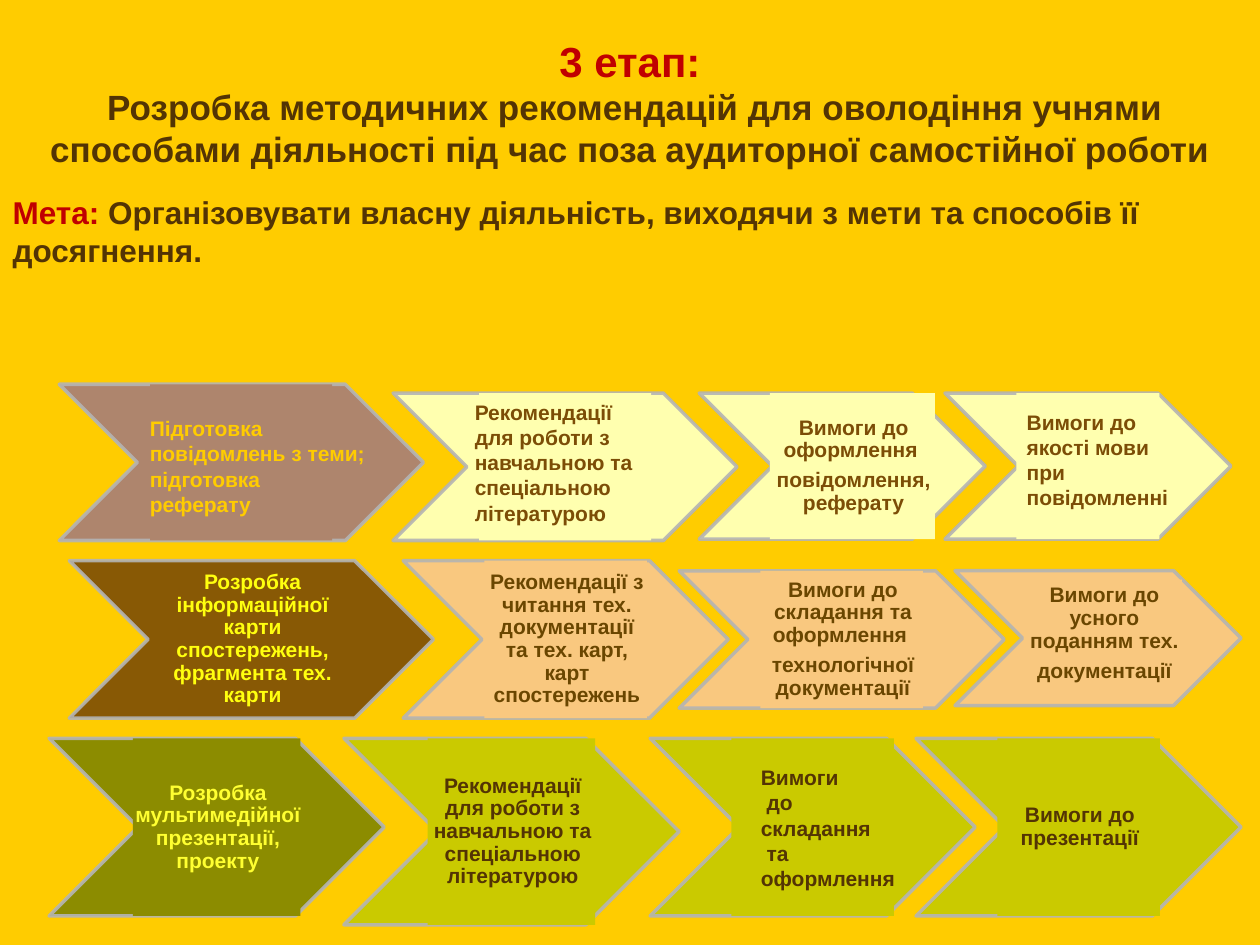
import pptx
import pptx.util
import pptx.dml.color
import pptx.enum.shapes
import pptx.enum.text
import pptx.oxml
import pptx.oxml.ns
from lxml import etree

Inches = pptx.util.Inches
Pt = pptx.util.Pt
RGBColor = pptx.dml.color.RGBColor
Shapes = pptx.enum.shapes.MSO_SHAPE
Anchor = pptx.enum.text.MSO_ANCHOR
Align = pptx.enum.text.PP_ALIGN
AutoSize = pptx.enum.text.MSO_AUTO_SIZE

GOLD = RGBColor(0xFF, 0xCC, 0x00)
RED = RGBColor(0xC0, 0x00, 0x00)
DARK_BROWN = RGBColor(0x53, 0x34, 0x04)
BROWN = RGBColor(0x7C, 0x4D, 0x06)
MID_BROWN = RGBColor(0x6A, 0x46, 0x00)
ROSE = RGBColor(0xAE, 0x85, 0x6D)
CREAM = RGBColor(0xFF, 0xFF, 0xAF)
PEACH = RGBColor(0xF9, 0xC8, 0x7F)
LIME = RGBColor(0xCA, 0xCA, 0x00)
OLIVE = RGBColor(0x8C, 0x8C, 0x00)
YELLOW = RGBColor(0xFF, 0xFF, 0x0F)
LIGHT_YELLOW = RGBColor(0xFF, 0xFF, 0x31)
GRAY = RGBColor(0xB4, 0xB4, 0xB4)

LITERATURE = "Рекомендації для роботи з навчальною та спеціальною літературою"

# Each step: chevron box, fill, label paragraphs, label colour, label box when not the middle half
STEPS = [
    ((7.5, 3.12, 2.27, 1.16), CREAM, [], BROWN, None),
    ((5.55, 3.12, 2.27, 1.16), CREAM, ["Вимоги до оформлення ", "повідомлення, реферату"],
     BROWN, (6.11, 3.12, 1.31, 1.16)),
    ((3.12, 3.12, 2.73, 1.17), CREAM, [], BROWN, None),
    ((0.47, 3.05, 2.89, 1.24), ROSE, [], GOLD, None),
    ((7.58, 4.53, 2.27, 1.07), PEACH, ["Вимоги до усного поданням тех.", "документації"],
     MID_BROWN, (8.13, 4.6, 1.25, 0.86)),
    ((5.39, 4.53, 2.58, 1.09), PEACH,
     ["Вимоги до складання та оформлення ", "технологічної документації"], MID_BROWN, None),
    ((3.2, 4.45, 2.58, 1.25), PEACH,
     ["Рекомендації з читання тех. документації та тех. карт, карт спостережень"],
     MID_BROWN, None),
    ((0.55, 4.45, 2.89, 1.25), BROWN,
     ["Розробка інформаційної карти спостережень, фрагмента тех. карти"],
     YELLOW, (1.27, 4.53, 1.45, 1.09)),
    ((7.27, 5.86, 2.58, 1.41), LIME, ["Вимоги до презентації"], DARK_BROWN, None),
    ((5.16, 5.86, 2.58, 1.41), LIME, [], DARK_BROWN, None),
    ((2.73, 5.86, 2.66, 1.48), LIME, [LITERATURE], DARK_BROWN, None),
    ((0.39, 5.86, 2.66, 1.41), OLIVE, ["Розробка мультимедійної презентації, проекту"],
     LIGHT_YELLOW, None),
]

NOTES = [
    ((8.05, 3.2, 1.33, 0.91), ["Вимоги до якості мови при повідомленні"], BROWN),
    ((3.67, 3.12, 1.64, 1.11), [LITERATURE], BROWN),
    ((1.09, 3.25, 1.95, 0.91), ["Підготовка повідомлень з теми;", "підготовка", "реферату"], GOLD),
    ((5.94, 6.02, 1.33, 1.11), ["Вимоги", " до складання", " та оформлення"], DARK_BROWN),
]


def inches(box):
    return [Inches(length) for length in box]


def place(shape, box):
    shape.left, shape.top, shape.width, shape.height = inches(box)


def set_font(font, size, color=None):
    font.name = "Arial"
    font.size = Pt(size)
    font.bold = True
    if color is not None:
        font.color.rgb = color


def write_paragraphs(frame, texts, color):
    frame.word_wrap = True
    frame.text = "\n".join(texts)
    for paragraph in frame.paragraphs:
        set_font(paragraph.font, 12, color)


def set_opacity(fill_parent, percent):
    for color in fill_parent.findall(
            pptx.oxml.ns.qn("a:solidFill") + "/" + pptx.oxml.ns.qn("a:srgbClr")):
        etree.SubElement(color, pptx.oxml.ns.qn("a:alpha"), val=str(percent * 1000))


def add_headings(slide):
    title, body = slide.placeholders
    place(title, (0, 0.23, 10, 1.18))
    place(body, (0, 1.48, 10, 0.71))
    for placeholder in (title, body):
        frame = placeholder.text_frame
        frame.word_wrap = True
        frame.auto_size = AutoSize.NONE
        frame.vertical_anchor = Anchor.TOP

    title.text_frame.text = "3 етап:\n Розробка методичних рекомендацій для оволодіння учнями " \
        "способами діяльності під час поза аудиторної самостійної роботи"
    for paragraph, size, color in zip(title.text_frame.paragraphs, (24, 20), (RED, DARK_BROWN)):
        paragraph.alignment = Align.CENTER
        set_font(paragraph.font, size, color)

    goal = body.text_frame.paragraphs[0]
    properties = goal._p.get_or_add_pPr()
    properties.set("marL", "0")
    properties.set("indent", "0")
    etree.SubElement(properties, pptx.oxml.ns.qn("a:buNone"))
    goal.space_before = Pt(0)
    set_font(goal.font, 18)
    for text, color in (
            ("Мета: ", RED),
            ("Організовувати власну діяльність, виходячи з мети та способів її досягнення.",
             DARK_BROWN)):
        run = goal.add_run()
        run.text = text
        run.font.color.rgb = color


def add_chevron(group, box, color):
    chevron = group.shapes.add_shape(Shapes.CHEVRON, *inches(box))
    chevron.shadow.inherit = False
    chevron.fill.solid()
    chevron.fill.fore_color.rgb = color
    chevron.line.color.rgb = GRAY
    chevron.line.width = Pt(2)
    set_opacity(chevron.line._ln, 90)
    if color == BROWN:
        set_opacity(chevron._element.spPr, 90)


def add_label(group, box, fill, texts, color):
    label = group.shapes.add_shape(Shapes.RECTANGLE, *inches(box))
    label.shadow.inherit = False
    label.line.fill.background()
    if fill == BROWN:
        label.fill.background()
    else:
        label.fill.solid()
        label.fill.fore_color.rgb = fill
    if not texts:
        return
    frame = label.text_frame
    frame.vertical_anchor = Anchor.MIDDLE
    frame.margin_left, frame.margin_top, frame.margin_right, frame.margin_bottom = inches(
        (0.02, 0.01, 0, 0.01))
    write_paragraphs(frame, texts, color)
    for paragraph in frame.paragraphs:
        paragraph.alignment = Align.CENTER
        paragraph.line_spacing = 0.9
        paragraph.space_after = Pt(4.2)


def add_step(slide, box, fill, texts, color, label_box):
    left, top, width, height = box
    group = slide.shapes.add_group_shape()
    add_chevron(group, box, fill)
    add_label(group, label_box or (left + width / 4, top, width / 2, height), fill, texts, color)


def add_note(slide, box, texts, color):
    note = slide.shapes.add_textbox(*inches(box))
    write_paragraphs(note.text_frame, texts, color)


def main():
    presentation = pptx.Presentation()
    presentation.slide_width, presentation.slide_height = Inches(10), Inches(7.5)
    slide = presentation.slides.add_slide(presentation.slide_layouts[1])
    slide.background.fill.solid()
    slide.background.fill.fore_color.rgb = GOLD
    add_headings(slide)
    for step in STEPS:
        add_step(slide, *step)
    for note in NOTES:
        add_note(slide, *note)
    presentation.save("out.pptx")


if __name__ == "__main__":
    main()
